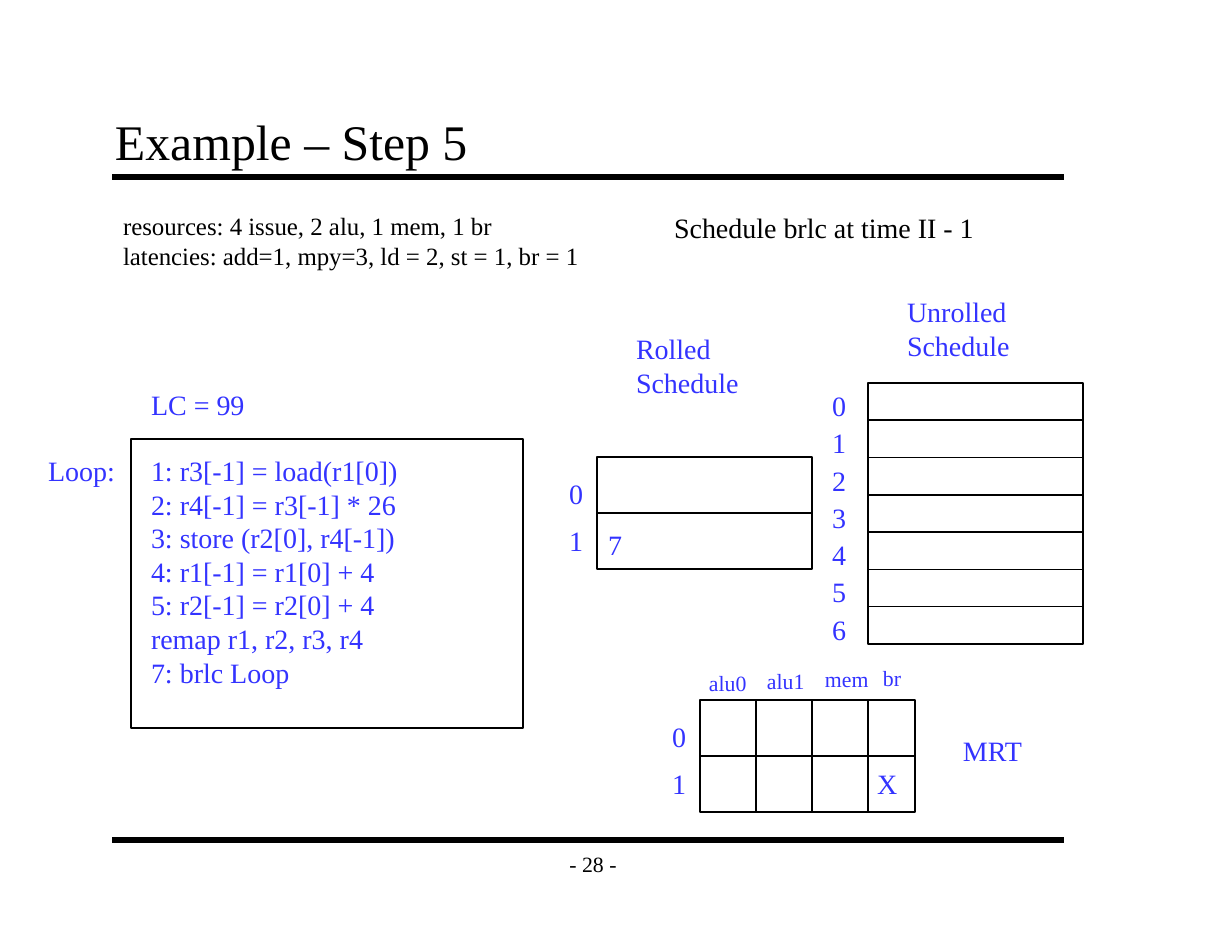
"""Build the modulo scheduling slide for step 5."""
from dataclasses import dataclass

from lxml import etree
from pptx import Presentation
from pptx import util as u
from pptx.dml.color import RGBColor
from pptx.enum import shapes, text
from pptx.oxml.ns import qn

SCALE = 914400 / 112


@dataclass(frozen=True)
class Theme:
    font: str = "Times New Roman"
    black: str = "000000"
    blue: str = "3333FF"
    title: int = 32
    body: int = 18
    note: int = 16
    small: int = 14
    thin: int = 1
    thick: int = 4


THEME = Theme()


def px(count):
    return u.Emu(round(count * SCALE))


def tint(code):
    return RGBColor.from_string(code)


def add_text(slide, lines, x, y, w, h, size=THEME.body, color=THEME.blue):
    box = slide.shapes.add_textbox(px(x), px(y), px(w), px(h))
    frame = box.text_frame
    frame.word_wrap = False
    frame.auto_size = text.MSO_AUTO_SIZE.SHAPE_TO_FIT_TEXT
    for i, line in enumerate(lines):
        para = frame.add_paragraph() if i else frame.paragraphs[0]
        run = para.add_run()
        run.text = line
        run.font.name = THEME.font
        run.font.size = u.Pt(size)
        run.font.color.rgb = tint(color)
    return frame


def add_frame(slide, line, x, y, w, h, size, anchor, wrap):
    frame = add_text(slide, [line], x, y, w, h, size, THEME.black)
    frame.auto_size = text.MSO_AUTO_SIZE.NONE
    frame.word_wrap = wrap
    frame.vertical_anchor = anchor
    frame.margin_left = frame.margin_right = px(12)
    frame.margin_top = frame.margin_bottom = px(6)
    return frame


def add_line(slide, x1, y1, x2, y2, width=THEME.thin):
    line = slide.shapes.add_connector(
        shapes.MSO_CONNECTOR.STRAIGHT, px(x1), px(y1), px(x2), px(y2))
    line.line.color.rgb = tint(THEME.black)
    line.line.width = u.Pt(width)
    etree.SubElement(line._element.spPr, qn("a:effectLst"))
    return line


def add_rect(slide, x, y, w, h):
    rect = slide.shapes.add_shape(
        shapes.MSO_SHAPE.RECTANGLE, px(x), px(y), px(w), px(h))
    rect.shadow.inherit = False
    rect.fill.background()
    rect.line.color.rgb = tint(THEME.black)
    rect.line.width = u.Pt(THEME.thin)
    return rect


def add_grid(slide, x, y, w, h, rows, cols=()):
    rect = add_rect(slide, x, y, w, h)
    for col in cols:
        add_line(slide, x + col, y, x + col, y + h)
    for i in range(1, rows):
        level = y + h * i / rows
        line = add_line(slide, x, level, x + w, level)
        if 2 * i == rows:
            line.begin_connect(rect, 1)
            line.end_connect(rect, 3)


def add_count(slide, x, y, step, total):
    for i in range(total):
        add_text(slide, [str(i)], x, y + i * step, 37, 45)


def add_base(slide):
    for y in (177, 840):
        add_line(slide, 112, y, 1064, y, THEME.thick)
    page = add_frame(slide, "- 28 -", 551, 840, 84, 47, THEME.small,
                     text.MSO_ANCHOR.MIDDLE, False)
    page.paragraphs[0].alignment = text.PP_ALIGN.CENTER
    add_frame(slide, "Example – Step 5", 103, 103, 952, 74, THEME.title,
              text.MSO_ANCHOR.BOTTOM, True)
    add_text(slide, ["resources: 4 issue, 2 alu, 1 mem, 1 br",
                     "latencies: add=1, mpy=3, ld = 2, st = 1, br = 1"],
             112, 205, 479, 72, THEME.note, THEME.black)
    add_text(slide, ["Schedule brlc at time II - 1"],
             663, 205, 323, 45, color=THEME.black)


def add_loop(slide):
    add_text(slide, ["1: r3[-1] = load(r1[0])", "2: r4[-1] = r3[-1] * 26",
                     "3: store (r2[0], r4[-1])", "4: r1[-1] = r1[0] + 4",
                     "5: r2[-1] = r2[0] + 4", "remap r1, r2, r3, r4",
                     "7: brlc Loop"], 140, 448, 269, 246)
    add_rect(slide, 131, 439, 392, 289)
    add_text(slide, ["Loop:"], 37, 448, 90, 45)
    add_text(slide, ["LC = 99"], 140, 382, 116, 45)


def add_rolled(slide):
    add_text(slide, ["Rolled", "Schedule"], 625, 326, 125, 78)
    add_grid(slide, 597, 457, 215, 112, 2)
    add_count(slide, 558, 471, 47, 2)
    add_text(slide, ["7"], 597, 522, 37, 45)


def add_unrolled(slide):
    add_text(slide, ["Unrolled", "Schedule"], 896, 289, 125, 78)
    add_grid(slide, 868, 383, 215, 261, 7)
    add_count(slide, 821, 383, 261 / 7, 7)


def add_mrt(slide):
    add_grid(slide, 700, 700, 215, 112, 2, (56, 112, 168))
    heads = (("alu0", 698, 664, 62), ("alu1", 756, 662, 62),
             ("mem", 814, 660, 68), ("br", 872, 659, 44))
    for name, x, y, w in heads:
        add_text(slide, [name], x, y, w, 37, THEME.small)
    add_count(slide, 661, 714, 47, 2)
    add_text(slide, ["X"], 866, 761, 43, 45)
    add_text(slide, ["MRT"], 952, 728, 83, 45)


def main():
    deck = Presentation()
    deck.slide_width, deck.slide_height = px(1232), px(952)
    slide = deck.slides.add_slide(deck.slide_layouts[6])
    add_base(slide)
    add_loop(slide)
    add_rolled(slide)
    add_unrolled(slide)
    add_mrt(slide)
    deck.save("out.pptx")


if __name__ == "__main__":
    main()
